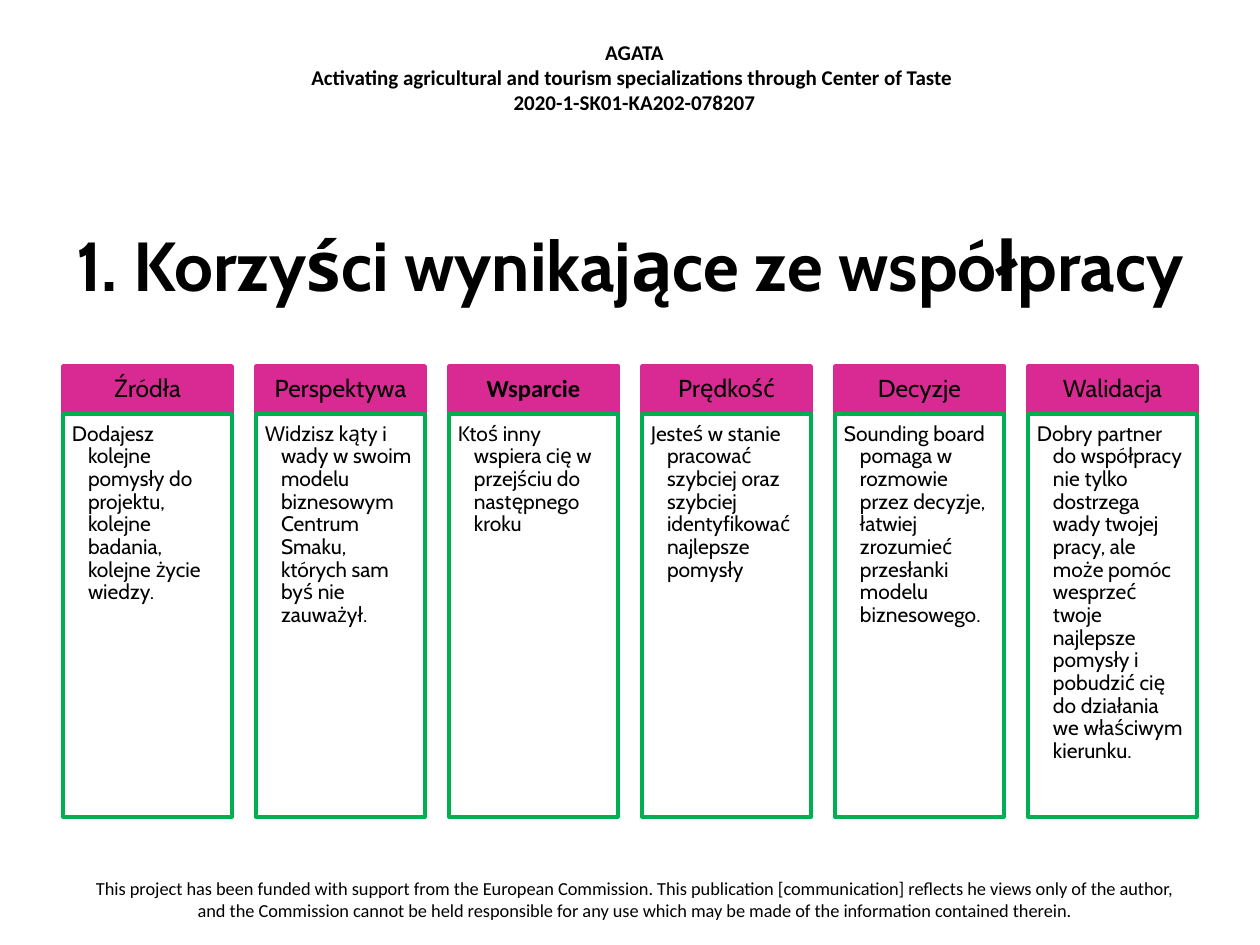
import pptx
import pptx.dml.color
import pptx.enum.shapes
import pptx.enum.text
import pptx.util

EMU_PER_PX = 914400 // 126
COLORS = {"text": "000000", "header": "D92A93", "frame": "00B050"}
ALIGN = pptx.enum.text.PP_ALIGN
ANCHOR = pptx.enum.text.MSO_ANCHOR


def px(value):
    return pptx.util.Emu(value * EMU_PER_PX)


def color(name):
    return pptx.dml.color.RGBColor.from_string(COLORS[name])


class SlideBuilder:
    """Holds the style and the current slide."""

    heading_font = "Cabin"
    note_font = "Calibri"

    def __init__(self, slide):
        self.slide = slide

    def add_run(self, paragraph, text, font, size, bold=False):
        run = paragraph.add_run()
        run.text = text
        run.font.name = font
        run.font.size = pptx.util.Pt(size)
        run.font.bold = bold
        run.font.color.rgb = color("text")

    def title(self, text, left, top, width, height):
        shape = self.slide.shapes.title
        shape.left, shape.top = px(left), px(top)
        shape.width, shape.height = px(width), px(height)
        frame = shape.text_frame
        frame.auto_size = pptx.enum.text.MSO_AUTO_SIZE.NONE
        frame.vertical_anchor = ANCHOR.MIDDLE
        paragraph = frame.paragraphs[0]
        paragraph.alignment = ALIGN.CENTER
        self.add_run(paragraph, text, self.heading_font, 39.6, bold=True)

    def note(self, lines, left, top, width, height, size, bold=False):
        shape = self.slide.shapes.add_textbox(px(left), px(top), px(width), px(height))
        frame = shape.text_frame
        frame.word_wrap = True
        for index, line in enumerate(lines):
            paragraph = frame.paragraphs[0] if index == 0 else frame.add_paragraph()
            paragraph.alignment = ALIGN.CENTER
            self.add_run(paragraph, line, self.note_font, size, bold)

    def box(self, left, top, width, height, line, anchor, insets):
        """Add an outlined rectangle and return it with its first paragraph."""
        shape = self.slide.shapes.add_shape(
            pptx.enum.shapes.MSO_SHAPE.RECTANGLE, px(left), px(top), px(width), px(height))
        shape.shadow.inherit = False
        shape.line.color.rgb = color(line)
        shape.line.width = pptx.util.Pt(2)
        frame = shape.text_frame
        frame.word_wrap = True
        frame.vertical_anchor = anchor
        (frame.margin_left, frame.margin_top,
         frame.margin_right, frame.margin_bottom) = [px(inset) for inset in insets]
        paragraph = frame.paragraphs[0]
        paragraph.line_spacing = 0.9
        return shape, paragraph

    def column_header(self, text, left, top, width, height, emphasized):
        shape, paragraph = self.box(
            left, top, width, height, "header", ANCHOR.MIDDLE, (14, 8, 14, 8))
        shape.fill.solid()
        shape.fill.fore_color.rgb = color("header")
        paragraph.alignment = ALIGN.CENTER
        font = self.note_font if emphasized else self.heading_font
        self.add_run(paragraph, text, font, 14, bold=emphasized)

    def column_body(self, text, left, top, width, height):
        shape, paragraph = self.box(
            left, top, width, height, "frame", ANCHOR.TOP, (9, 9, 12, 12))
        shape.fill.background()
        paragraph.alignment = ALIGN.LEFT
        paragraph.level = 1
        # Hanging indent
        properties = paragraph._p.get_or_add_pPr()
        properties.set("marL", str(px(16)))
        properties.set("indent", str(px(-16)))
        self.add_run(paragraph, text, self.heading_font, 12)


BENEFITS = [
    ("Źródła", "Dodajesz kolejne pomysły do projektu, kolejne badania, "
     "kolejne życie wiedzy."),
    ("Perspektywa", "Widzisz kąty i wady w swoim modelu biznesowym Centrum Smaku, "
     "których sam byś nie zauważył."),
    ("Wsparcie", "Ktoś inny wspiera cię w przejściu do następnego kroku"),
    ("Prędkość", "Jesteś w stanie pracować szybciej oraz szybciej identyfikować "
     "najlepsze pomysły"),
    ("Decyzje", "Sounding board pomaga w rozmowie przez decyzje, łatwiej zrozumieć "
     "przesłanki modelu biznesowego."),
    ("Walidacja", "Dobry partner do współpracy nie tylko dostrzega wady twojej pracy, "
     "ale może pomóc wesprzeć twoje najlepsze pomysły i pobudzić cię do działania "
     "we właściwym kierunku."),
]


def main():
    presentation = pptx.Presentation()
    presentation.slide_width, presentation.slide_height = px(1260), px(945)
    title_only = presentation.slide_layouts[5]
    builder = SlideBuilder(presentation.slides.add_slide(title_only))

    # Project header and funding notice
    builder.note(
        ["AGATA",
         "Activating agricultural and tourism specializations through Center of Taste ",
         "2020-1-SK01-KA202-078207"],
        262, 33, 745, 89, 12, bold=True)
    builder.note(
        ["This project has been funded with support from the European Commission. "
         "This publication [communication] reflects he views only of the author, "
         "and the Commission cannot be held responsible for any use which may be made "
         "of the information contained therein."],
        68, 871, 1134, 59, 10.5)

    builder.title("1. Korzyści wynikające ze współpracy", 63, 185, 1134, 158)

    # Benefit columns, evenly spaced
    left, top, width, pitch = 63, 366, 169, 193
    header_height, body_height = 48, 403
    for index, (name, description) in enumerate(BENEFITS):
        x = left + index * pitch
        builder.column_header(name, x, top, width, header_height, name == "Wsparcie")
        builder.column_body(description, x, top + header_height, width, body_height)

    presentation.save("out.pptx")


if __name__ == "__main__":
    main()
